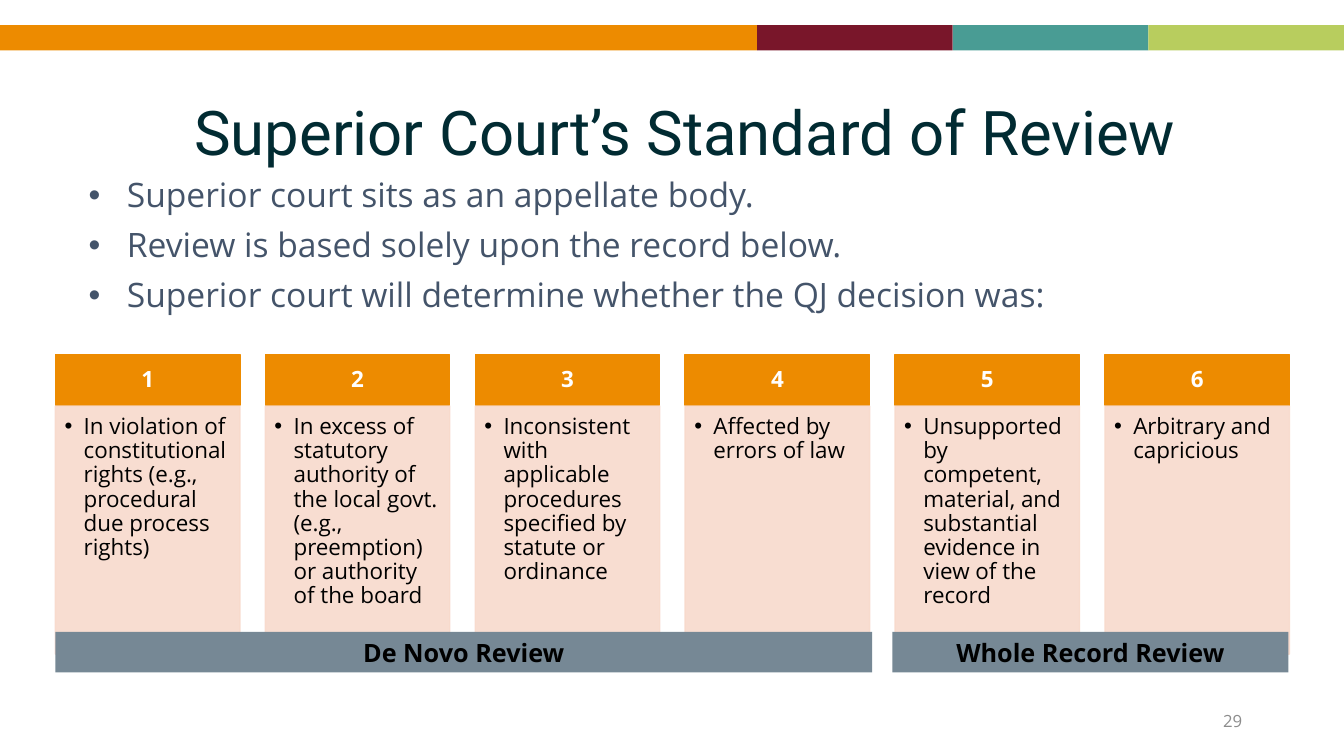
from lxml import etree
from pptx import Presentation
from pptx import util as u
from pptx.dml.color import RGBColor
from pptx.enum import shapes, text
from pptx.oxml.ns import qn

BODY_FONT = "Open Sans"
ORANGE = "ED8B00"
PEACH = "F8DACC"
SLATE = "768895"
BLACK = "000000"

STRIPES = [(0, 7.51, ORANGE), (7.51, 1.94, "79162A"),
           (9.45, 1.94, "499C94"), (11.39, 1.94, "B8CD5E")]
POINTS = [
    "Superior court sits as an appellate body.",
    "Review is based solely upon the record below.",
    "Superior court will determine whether the QJ decision was:",
]
GROUNDS = [
    "In violation of constitutional rights (e.g., procedural due process rights)",
    "In excess of statutory authority of the local govt. (e.g., preemption) or authority of the board",
    "Inconsistent with applicable procedures specified by statute or ordinance",
    "Affected by errors of law",
    "Unsupported by competent, material, and substantial evidence in view of the record",
    "Arbitrary and capricious",
]
REVIEWS = [(0.55, 8.1, "De Novo Review"), (8.85, 3.93, "Whole Record Review")]

FIRST_LEFT = 0.55
LAST_LEFT = 10.96
COLUMN_WIDTH = 1.83
COLUMN_STEP = (LAST_LEFT - FIRST_LEFT) / (len(GROUNDS) - 1)


def colour(value):
    return RGBColor.from_string(value)


def place(left, top, width, height):
    return [u.Inches(length) for length in (left, top, width, height)]


def set_alpha(fill_parent, percent):
    for tone in fill_parent.iter(qn("a:srgbClr")):
        etree.SubElement(tone, qn("a:alpha")).set("val", str(percent * 1000))


def add_block(page, area, fill, outlined=False):
    block = page.shapes.add_shape(shapes.MSO_SHAPE.RECTANGLE, *place(*area))
    block.shadow.inherit = False
    block.fill.solid()
    block.fill.fore_color.rgb = colour(fill)
    if outlined:
        block.line.color.rgb = colour(fill)
        block.line.width = u.Pt(1)
    else:
        block.line.fill.background()
    return block


def add_box(page, area):
    return page.shapes.add_textbox(*place(*area))


def set_frame(box, anchor, insets=(0.1, 0.05, 0.1, 0.05)):
    frame = box.text_frame
    frame.word_wrap = True
    frame.vertical_anchor = anchor
    (frame.margin_left, frame.margin_top,
     frame.margin_right, frame.margin_bottom) = place(*insets)


def add_bullet(para, indent):
    properties = para._p.get_or_add_pPr()
    properties.set("marL", str(u.Inches(indent)))
    properties.set("indent", str(-u.Inches(indent)))
    etree.SubElement(properties, qn("a:buFont")).set("typeface", "Arial")
    etree.SubElement(properties, qn("a:buChar")).set("char", "•")


def write(box, lines, size, tone, align=text.PP_ALIGN.LEFT, font=BODY_FONT,
          bold=False, spacing=0.9, gap=0, indent=None):
    frame = box.text_frame
    for index, line in enumerate(lines):
        para = frame.add_paragraph() if index else frame.paragraphs[0]
        para.alignment = align
        para.line_spacing = spacing
        para.space_before = u.Pt(gap if index else 0)
        if indent:
            add_bullet(para, indent)
        span = para.add_run()
        span.text = line
        span.font.name = font
        span.font.size = u.Pt(size)
        span.font.bold = bold
        span.font.color.rgb = colour(tone)


def add_ground(page, number, ground):
    left = FIRST_LEFT + (number - 1) * COLUMN_STEP
    header = add_block(page, (left, 3.52, COLUMN_WIDTH, 0.5), ORANGE, outlined=True)
    set_frame(header, text.MSO_ANCHOR.MIDDLE, (0.12, 0.07, 0.12, 0.07))
    write(header, [str(number)], 16, "FFFFFF", text.PP_ALIGN.CENTER, bold=True)

    panel = add_block(page, (left, 4.03, COLUMN_WIDTH, 2.46), PEACH, outlined=True)
    set_alpha(panel._element.spPr, 90)
    set_frame(panel, text.MSO_ANCHOR.TOP, (0.09, 0.09, 0.12, 0.14))
    write(panel, [ground], 16, BLACK, indent=0.19)


def add_review(page, left, width, label):
    bar = add_block(page, (left, 6.27, width, 0.4), SLATE)
    set_frame(bar, text.MSO_ANCHOR.TOP)
    write(bar, [label], 18, BLACK, text.PP_ALIGN.CENTER, bold=True, spacing=1.0)


def main():
    deck = Presentation()
    deck.slide_width = u.Inches(13.33)
    deck.slide_height = u.Inches(7.5)
    page = deck.slides.add_slide(deck.slide_layouts[6])

    for left, width, fill in STRIPES:
        add_block(page, (left, 0.25, width, 0.25), fill)

    title = add_box(page, (1.05, 0.62, 11.5, 1.45))
    set_frame(title, text.MSO_ANCHOR.MIDDLE)
    write(title, ["Superior Court’s Standard of Review"], 44, "012B32",
          text.PP_ALIGN.CENTER, font="Roboto")

    points = add_box(page, (0.78, 1.72, 11.77, 0.43))
    set_frame(points, text.MSO_ANCHOR.TOP)
    write(points, POINTS, 24, "44546A", gap=10, indent=0.38)

    for number, ground in enumerate(GROUNDS, start=1):
        add_ground(page, number, ground)

    page_number = add_box(page, (9.42, 6.95, 3, 0.4))
    set_frame(page_number, text.MSO_ANCHOR.MIDDLE)
    write(page_number, ["29"], 12, "8C8C8C", text.PP_ALIGN.RIGHT, spacing=1.0)

    for left, width, label in REVIEWS:
        add_review(page, left, width, label)

    deck.save("out.pptx")


if __name__ == "__main__":
    main()
